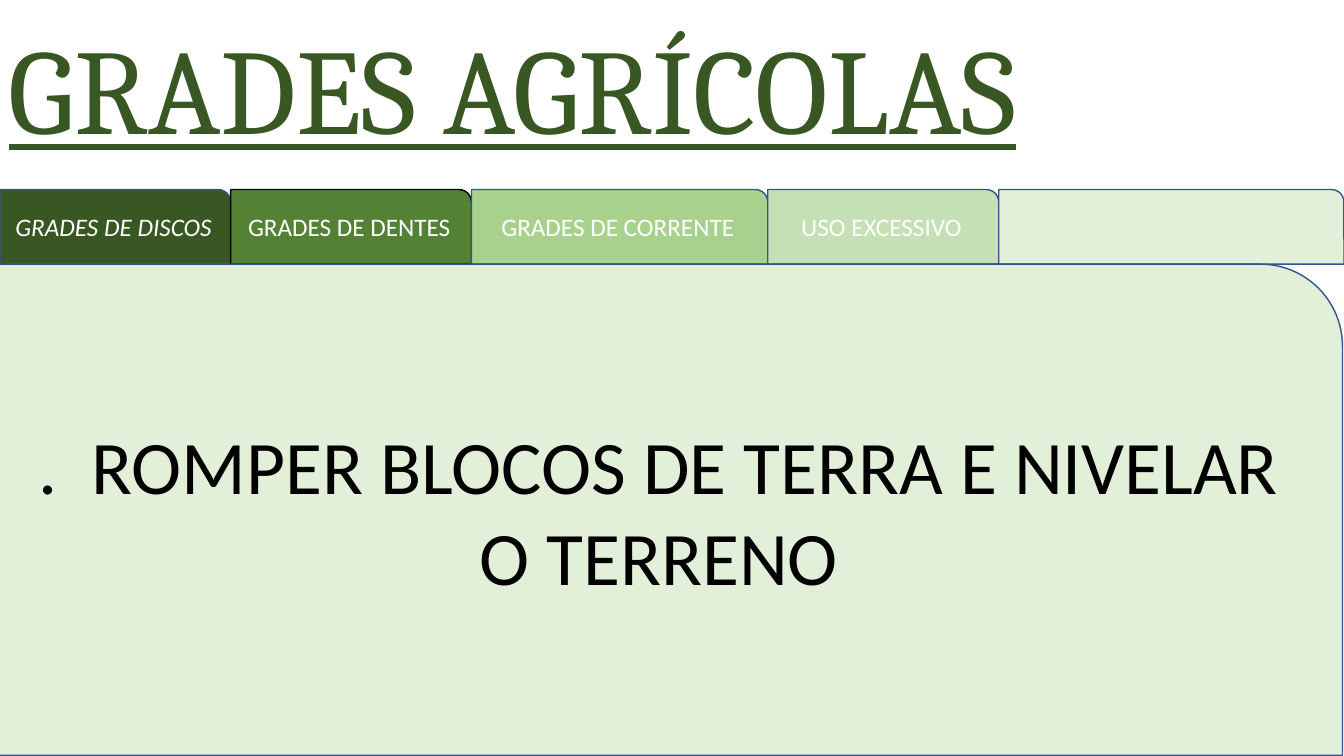
from pptx import Presentation
from pptx.dml.color import RGBColor
from pptx.enum.shapes import MSO_SHAPE
from pptx.enum.text import MSO_ANCHOR, PP_ALIGN
from pptx.util import Pt

FOREST = RGBColor(0x38, 0x57, 0x23)
LEAF = RGBColor(0x54, 0x82, 0x35)
SAGE = RGBColor(0xA9, 0xD1, 0x8E)
MINT = RGBColor(0xC5, 0xE0, 0xB4)
PALE = RGBColor(0xE2, 0xF0, 0xD9)
OUTLINE = RGBColor(0x32, 0x54, 0x91)
BLACK = RGBColor(0, 0, 0)
WHITE = RGBColor(0xFF, 0xFF, 0xFF)

TAB_TOP = 135.4
TAB_HEIGHT = 53.3
TABS = [
    ("GRADES DE DISCOS", 164.8, FOREST, OUTLINE, True),
    ("GRADES DE DENTES", 172, LEAF, BLACK, False),
    ("GRADES DE CORRENTE", 211.6, SAGE, OUTLINE, False),
    ("USO EXCESSIVO", 165, MINT, OUTLINE, False),
    ("", 246.6, PALE, OUTLINE, False),
]


def write_text(box, text, size, color, font="Calibri", align=PP_ALIGN.CENTER):
    frame = box.text_frame
    frame.word_wrap = True
    frame.vertical_anchor = MSO_ANCHOR.MIDDLE
    frame.text = text
    para = frame.paragraphs[0]
    para.alignment = align
    span = para.runs[0]
    span.font.name = font
    span.font.size = Pt(size)
    span.font.color.rgb = color
    return para


def add_title(slide, text):
    box = slide.shapes.add_textbox(Pt(-0.7), Pt(1.4), Pt(959), Pt(134))
    para = write_text(box, text, 86.4, FOREST, "Cambria", PP_ALIGN.LEFT)
    para.line_spacing = 0.9
    para.runs[0].font.underline = True


def add_card(slide, left, top, width, height, fill, outline):
    card = slide.shapes.add_shape(
        MSO_SHAPE.ROUND_1_RECTANGLE, Pt(left), Pt(top), Pt(width), Pt(height)
    )
    card.shadow.inherit = False
    card.fill.solid()
    card.fill.fore_color.rgb = fill
    card.line.color.rgb = outline
    card.line.width = Pt(1)
    return card


def add_tabs(slide):
    left = 0
    for label, width, fill, outline, italic in TABS:
        tab = add_card(slide, left, TAB_TOP, width, TAB_HEIGHT, fill, outline)
        if label:
            para = write_text(tab, label, 18, WHITE)
            para.runs[0].font.italic = italic
        left += width


def main():
    deck = Presentation()
    deck.slide_width = Pt(960)
    deck.slide_height = Pt(540)
    slide = deck.slides.add_slide(deck.slide_layouts[6])
    add_title(slide, "GRADES AGRÍCOLAS")
    add_tabs(slide)
    panel = add_card(slide, -0.7, TAB_TOP + TAB_HEIGHT, 959.6, 350.8, PALE, OUTLINE)
    write_text(panel, ".  ROMPER BLOCOS DE TERRA E NIVELAR O TERRENO", 54, BLACK)
    deck.save("out.pptx")


if __name__ == "__main__":
    main()
